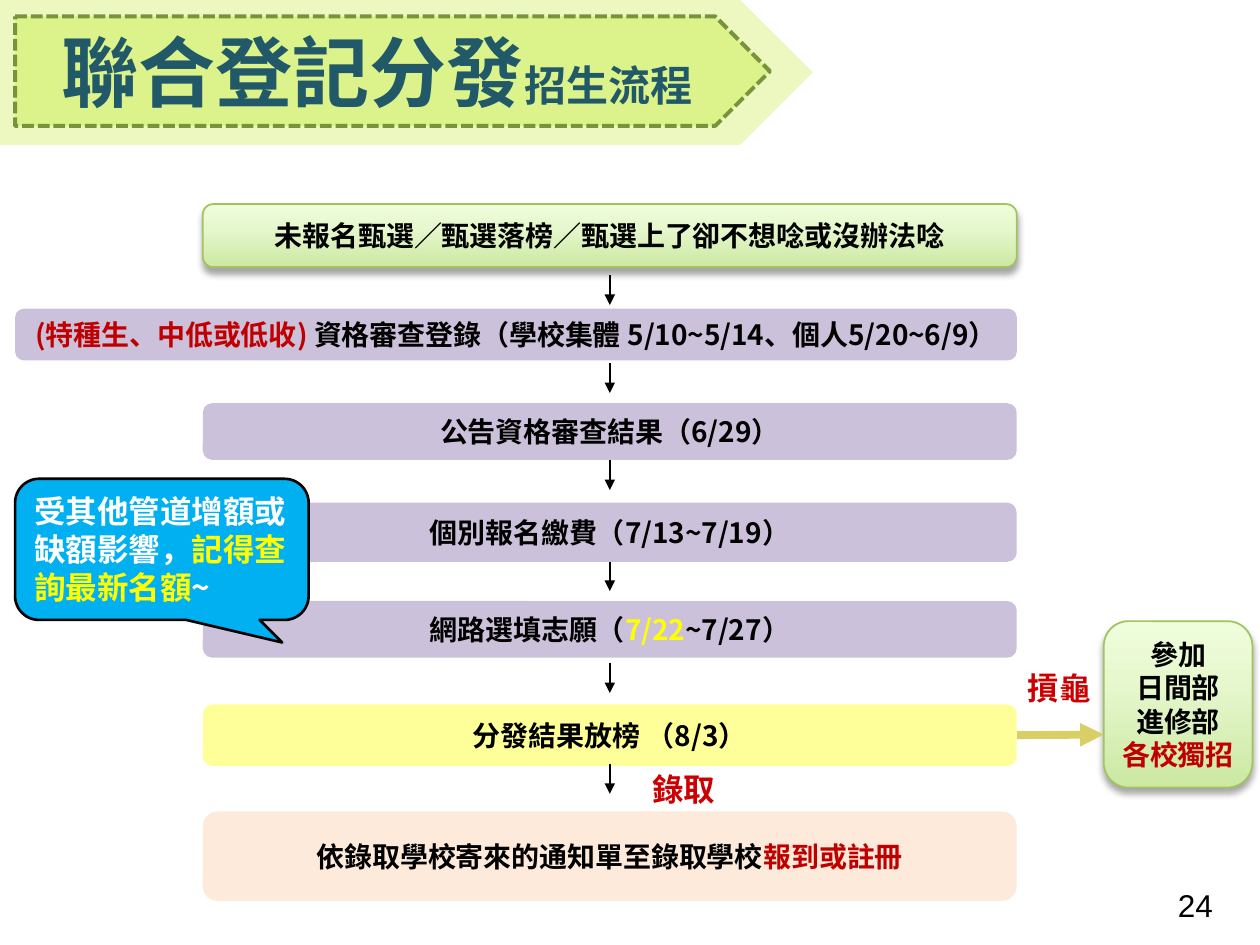
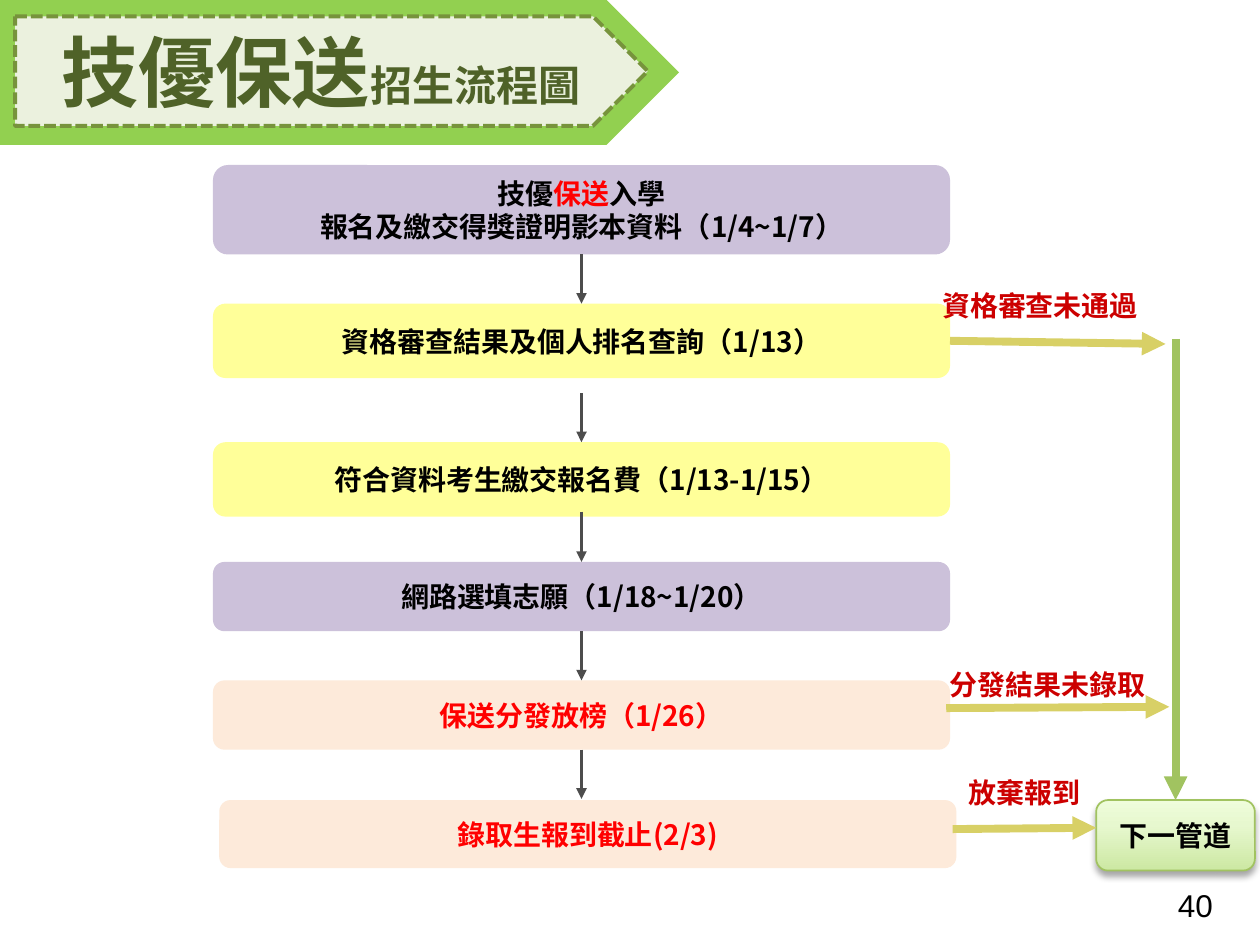
from dataclasses import dataclass

from lxml.etree import SubElement
from pptx import Presentation
from pptx.dml.color import RGBColor
from pptx.enum.dml import MSO_LINE
from pptx.enum.shapes import MSO_CONNECTOR, MSO_SHAPE as SHAPE
from pptx.enum.text import MSO_ANCHOR as ANCHOR, PP_ALIGN as ALIGN
from pptx.oxml.ns import qn
from pptx.util import Inches, Pt

# Shared look
SANS, MONO, NUMBER_FONT = "Noto Sans CJK SC", "Noto Sans Mono", "Arial"
BLACK, WHITE, YELLOW = "000000", "FFFFFF", "FFFF00"
RED, DARK_RED, LABEL_RED = "FF0000", "C00000", "CC0000"
LILAC, CREAM, PEACH = "CCC1DA", "FFFF99", "FDEADA"
SKY, GRAY, GOLD, GREEN, OLIVE = "00B0F0", "4D4D4D", "D8D066", "A1C360", "77933C"
GREEN_STOPS = ((0, "CCE8A2"), (65, "E7F8CF"), (100, "EFFDDB"))
GLOSSY = "glossy green"
TOP, LEFT, BOTTOM, RIGHT = range(4)
TOLERANCE = 0.015


@dataclass
class Step:
    top: float
    height: float
    fill: str
    lines: list
    shift: float = 0
    extra_width: float = 0


def rgb(color):
    return RGBColor.from_string(color)


def inches(*lengths):
    return [Inches(length) for length in lengths]


def write(frame, lines, size, font=SANS, align=ALIGN.LEFT, bold=True):
    """Each line is a list of (text, colour) or (text, colour, size) runs."""
    for index, line in enumerate(lines):
        paragraph = frame.add_paragraph() if index else frame.paragraphs[0]
        paragraph.alignment = align
        for text, color, *own_size in line:
            run = paragraph.add_run()
            run.text = text
            run.font.name = font
            run.font.bold = bold
            run.font.size = Pt(own_size[0] if own_size else size)
            run.font.color.rgb = rgb(color)
            east_asian = SubElement(run.font._element, qn("a:ea"))
            east_asian.set("typeface", font)


def add_panel(slide, preset, box, fill, line=None, line_width=1):
    panel = slide.shapes.add_shape(preset, *inches(*box))
    panel.shadow.inherit = False
    panel.fill.solid()
    panel.fill.fore_color.rgb = rgb(fill)
    if line:
        panel.line.color.rgb = rgb(line)
        panel.line.width = Pt(line_width)
    else:
        panel.line.fill.background()
    return panel


def make_glossy(panel):
    """Green gradient, darker at the bottom, with a soft drop shadow."""
    panel.fill.gradient()
    panel.fill.gradient_angle = 90
    properties = panel.element.spPr
    stops = properties.find(qn("a:gradFill")).find(qn("a:gsLst"))
    for stop in list(stops):
        stops.remove(stop)
    for position, color in GREEN_STOPS:
        stop = SubElement(stops, qn("a:gs"), pos=str(position * 1000))
        SubElement(stop, qn("a:srgbClr"), val=color)
    shadow = SubElement(properties.find(qn("a:effectLst")), qn("a:outerShdw"),
                        blurRad=str(Pt(4)), dist=str(Pt(3)), dir="5400000", rotWithShape="0")
    shade = SubElement(shadow, qn("a:srgbClr"), val=BLACK)
    SubElement(shade, qn("a:alpha"), val="35000")


def add_box(slide, box, fill, lines):
    glossy = fill == GLOSSY
    panel = add_panel(slide, SHAPE.ROUNDED_RECTANGLE, box,
                      GREEN if glossy else fill, GREEN if glossy else None)
    if glossy:
        make_glossy(panel)
    panel.text_frame.word_wrap = False
    panel.text_frame.vertical_anchor = ANCHOR.MIDDLE
    write(panel.text_frame, lines, 16, align=ALIGN.CENTER)
    return panel


def add_arrow(slide, start, end, color, width, begin=None, finish=None):
    """begin and finish are (shape, side) pairs to join the ends to."""
    arrow = slide.shapes.add_connector(MSO_CONNECTOR.STRAIGHT, *inches(*start, *end))
    if begin:
        arrow.begin_connect(*begin)
    if finish:
        arrow.end_connect(*finish)
    arrow.line.color.rgb = rgb(color)
    arrow.line.width = Pt(width)
    SubElement(arrow.line._get_or_add_ln(), qn("a:tailEnd"), type="triangle")
    SubElement(arrow.element.spPr, qn("a:effectLst"))


def add_label(slide, box, text, size, font, color=LABEL_RED, bold=True):
    label = slide.shapes.add_textbox(*inches(*box))
    label.text_frame.word_wrap = True
    label.text_frame.margin_right = 0
    write(label.text_frame, [[(text, color)]], size, font, bold=bold)


def add_banner(slide, width, band, plate, plate_width, heading, subheading, color):
    add_panel(slide, SHAPE.PENTAGON, (-0.04, 0, width, 1.15), band)
    plate_box = (0.12, 0.13, plate_width, 0.87)
    dashed = add_panel(slide, SHAPE.PENTAGON, plate_box, plate, OLIVE, 2.25)
    dashed.line.dash_style = MSO_LINE.SQUARE_DOT
    # The title lies on top of the plate
    title = slide.shapes.title
    title.left, title.top, title.width, title.height = inches(*plate_box)
    slide.shapes.element.append(title.element)
    frame = title.text_frame
    frame.margin_left, frame.margin_right = Inches(0.37), 0
    frame.vertical_anchor = ANCHOR.MIDDLE
    frame.word_wrap = False
    write(frame, [[(heading, color, 44), (subheading, color, 24)]], 44, MONO)


def add_flow(slide, left, top, width, steps, arrow_tops, arrow_length, color, weight):
    """A column of steps; arrow ends that meet a step's middle are joined to it."""
    boxes = [add_box(slide, (left + step.shift, top + step.top,
                             width + step.extra_width, step.height), step.fill, step.lines)
             for step in steps]

    def joint(index, side, y):
        step = steps[index]
        edge = step.top + (step.height if side == BOTTOM else 0)
        centred = abs(step.shift + step.extra_width / 2) < TOLERANCE
        return (boxes[index], side) if centred and abs(edge - y) < TOLERANCE else None

    middle = left + width / 2
    for index, start in enumerate(arrow_tops):
        end = start + arrow_length
        add_arrow(slide, (middle, top + start), (middle, top + end), color, weight,
                  joint(index, BOTTOM, start), joint(index + 1, TOP, end))
    return boxes


def new_slide(deck, number):
    slide = deck.slides.add_slide(deck.slide_layouts[5])
    add_label(slide, (9.25, 6.98, 0.63, 0.4), number, 18, NUMBER_FONT, BLACK, bold=False)
    return slide


def add_callout(slide, box):
    callout = add_panel(slide, SHAPE.ROUNDED_RECTANGULAR_CALLOUT, box, SKY, BLACK, 1.5)
    for index, value in enumerate((0.41, 0.66, 0.17)):
        callout.adjustments[index] = value
    callout.text_frame.word_wrap = True
    callout.text_frame.vertical_anchor = ANCHOR.TOP
    write(callout.text_frame, [[("受其他管道增額或缺額影響，", WHITE),
                                ("記得查詢最新名額", YELLOW), ("~", WHITE)]], 18)


def build_joint_placement(deck):
    slide = new_slide(deck, "24")
    add_banner(slide, 6.49, "ECF8C0", "DCF28A", 5.99, "聯合登記分發", "招生流程", "215968")
    # Main flow
    steps = [
        Step(0, 0.5, GLOSSY, [[("未報名甄選／甄選落榜／甄選上了卻不想唸或沒辦法唸", BLACK)]]),
        Step(0.83, 0.41, LILAC, [[("(特種生、中低或低收) ", DARK_RED),
                                  ("資格審查登錄（學校集體 5/10~5/14、個人5/20~6/9）", BLACK)]],
             shift=-1.49, extra_width=1.49),
        Step(1.58, 0.45, LILAC, [[("公告資格審查結果（6/29）", BLACK)]]),
        Step(2.37, 0.47, LILAC, [[("個別報名繳費（7/13~7/19）", BLACK)]]),
        Step(3.15, 0.45, LILAC, [[("網路選填志願（", BLACK), ("7/22", YELLOW),
                                  ("~7/27）", BLACK)]]),
        Step(3.97, 0.49, CREAM, [[("分發結果放榜 （8/3）", BLACK)]]),
        Step(4.82, 0.71, PEACH, [[("依錄取學校寄來的通知單至錄取學校", BLACK),
                                  ("報到或註冊", DARK_RED)]]),
    ]
    boxes = add_flow(slide, 1.61, 1.62, 6.46, steps,
                     (0.56, 1.26, 2.03, 2.83, 3.64, 4.44), 0.24, BLACK, 1)
    # Outcomes
    add_label(slide, (5.08, 6.06, 1.37, 0.4), "錄取", 18, SANS)
    add_label(slide, (8.06, 5.26, 0.75, 0.4), "摃龜", 18, SANS)
    add_box(slide, (8.76, 4.93, 1.18, 1.32), GLOSSY,
            [[("參加", BLACK)], [("日間部", BLACK)], [("進修部", BLACK)],
             [("各校獨招", DARK_RED)]])
    add_arrow(slide, (8.07, 5.84), (8.76, 5.83), GOLD, 4.5, begin=(boxes[5], RIGHT))
    add_callout(slide, (0.12, 3.8, 2.33, 1.12))


def build_skill_recommendation(deck):
    slide = new_slide(deck, "40")
    add_banner(slide, 5.43, "92D050", "EBF1DE", 5.02, "技優保送", "招生流程圖", "4F6228")
    # Main flow
    steps = [
        Step(0, 0.71, LILAC, [[("技優", BLACK), ("保送", RED), ("入學", BLACK)],
                              [("報名及繳交得獎證明影本資料（1/4~1/7）", BLACK)]]),
        Step(1.1, 0.59, CREAM, [[("資格審查結果及個人排名查詢（1/13）", BLACK)]]),
        Step(2.2, 0.59, CREAM, [[("符合資料考生繳交報名費（1/13-1/15）", BLACK)]]),
        Step(3.15, 0.55, LILAC, [[("網路選填志願（1/18~1/20）", BLACK)]]),
        Step(4.09, 0.55, PEACH, [[("保送分發放榜（1/26）", RED)]]),
        Step(5.04, 0.54, PEACH, [[("錄取生報到截止(2/3)", RED)]], shift=0.05),
    ]
    boxes = add_flow(slide, 1.69, 1.31, 5.85, steps,
                     (0.71, 1.81, 2.75, 3.7, 4.64), 0.39, GRAY, 2)
    # Ways out to the next channel
    next_channel = add_box(slide, (8.7, 6.35, 1.26, 0.56), GLOSSY, [[("下一管道", BLACK)]])
    add_arrow(slide, (9.33, 2.69), (9.33, 6.35), GREEN, 4.5, finish=(next_channel, TOP))
    add_arrow(slide, (7.54, 2.73), (9.25, 2.73), GOLD, 4.5, begin=(boxes[1], RIGHT))
    add_arrow(slide, (7.51, 5.62), (9.28, 5.61), GOLD, 4.5)
    add_arrow(slide, (7.56, 6.58), (8.7, 6.57), GOLD, 4.5)
    for left, top, width, reason in ((7.38, 2.24, 1.88, "資格審查未通過"),
                                     (7.44, 5.25, 2.01, "分發結果未錄取"),
                                     (7.59, 6.11, 1.25, "放棄報到")):
        add_label(slide, (left, top, width, 0.37), reason, 16, MONO)


def main():
    deck = Presentation()
    deck.slide_width, deck.slide_height = inches(10, 7.5)
    build_joint_placement(deck)
    build_skill_recommendation(deck)
    deck.save("out.pptx")


if __name__ == "__main__":
    main()
